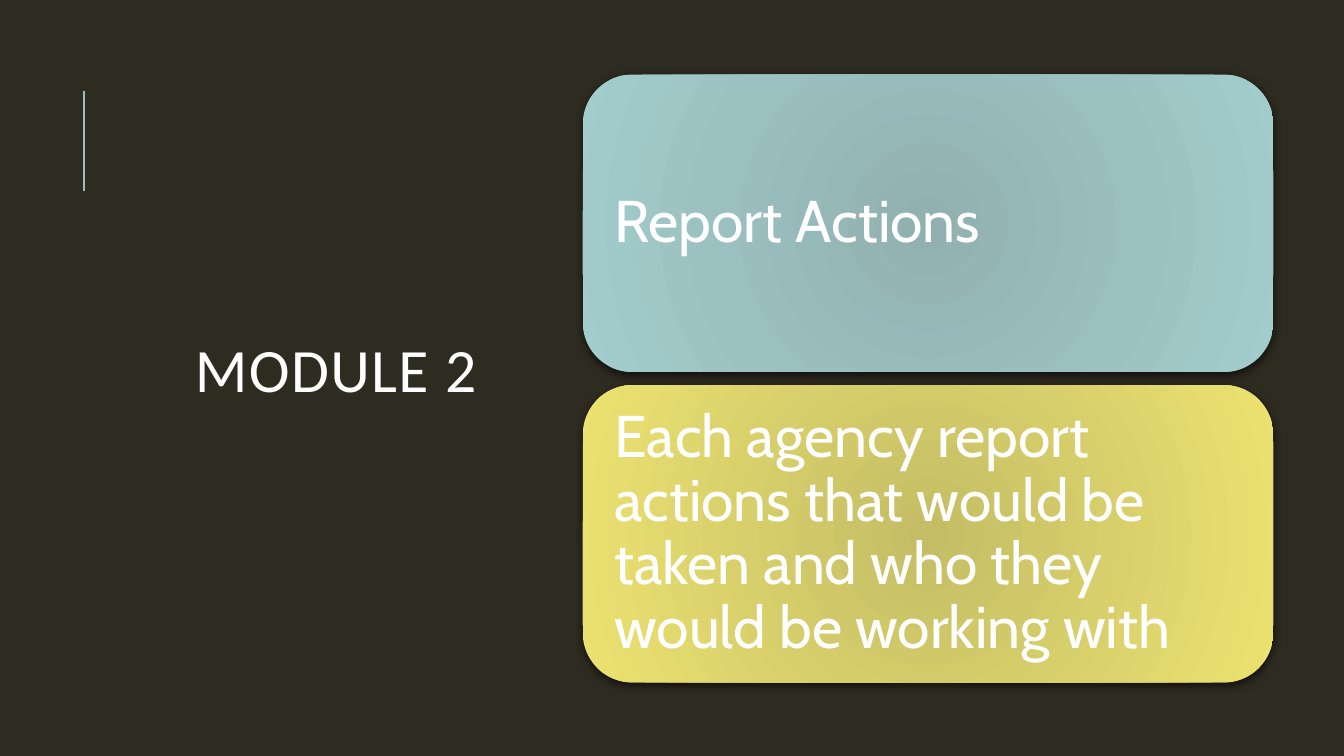
from lxml import etree
from pptx import Presentation
from pptx.dml.color import RGBColor
from pptx.enum.shapes import MSO_CONNECTOR, MSO_SHAPE
from pptx.enum.text import MSO_ANCHOR as ANCHOR, MSO_AUTO_SIZE as AUTO_SIZE, PP_ALIGN as ALIGN
from pptx.oxml import parse_xml
from pptx.oxml.ns import qn
from pptx.util import Inches, Pt

NAMESPACE = 'xmlns:a="http://schemas.openxmlformats.org/drawingml/2006/main"'
WHITE, BACKGROUND, ACCENT = "FFFFFF", "2E2B21", "9CBEBD"
CARDS = [
    ("Report Actions", "91B1B0", "A2CDCC"),
    ("Each agency report actions that would be taken and who they would be working with",
     "C4BD65", "ECE271"),
]


def color(hex_string):
    return RGBColor.from_string(hex_string)


def write_text(shape, text, font, frame_format, paragraph_format):
    frame = shape.text_frame
    frame.text = text
    paragraph = frame.paragraphs[0]
    run = paragraph.runs[0]
    run.font.color.rgb = color(WHITE)
    for target, values in ((frame, frame_format), (paragraph, paragraph_format), (run.font, font)):
        for name, value in values.items():
            setattr(target, name, value)
    return run


def add_title(slide, left, top, width, height):
    """Right-aligned title with the accent rule above it."""
    title = slide.shapes.title
    title.left, title.top, title.width, title.height = map(Inches, (left, top, width, height))
    run = write_text(
        title, "MODULE 2", {"name": "Calibri", "size": Pt(44)},
        {"vertical_anchor": ANCHOR.MIDDLE, "word_wrap": True, "auto_size": AUTO_SIZE.NONE},
        {"alignment": ALIGN.RIGHT, "line_spacing": 0.8})
    run.font._element.set("spc", "100")

    rule_x, rule_top = Inches(left + 0.09), Inches(top - 1.36)
    rule = slide.shapes.add_connector(
        MSO_CONNECTOR.STRAIGHT, rule_x, rule_top + Inches(1), rule_x, rule_top)
    rule.line.color.rgb = color(ACCENT)
    rule.line.width = Pt(1.5)
    etree.SubElement(rule._element.spPr, qn("a:effectLst"))


def fill_radial(shape, center, edge):
    shape.fill.gradient()
    for stop, hex_string in zip(shape.fill.gradient_stops, (center, edge)):
        stop.color.rgb = color(hex_string)
    gradient = shape._element.spPr.find(qn("a:gradFill"))
    gradient.replace(gradient.find(qn("a:lin")), parse_xml(
        f'<a:path {NAMESPACE} path="circle">'
        '<a:fillToRect l="50000" t="50000" r="50000" b="50000"/></a:path>'))


def add_shadow(shape):
    shape._element.spPr.append(parse_xml(
        f'<a:effectLst {NAMESPACE}><a:outerShdw blurRad="{Pt(6)}" dist="{Pt(2)}" dir="5400000" '
        'algn="ctr" rotWithShape="0"><a:srgbClr val="000000"><a:alpha val="60000"/></a:srgbClr>'
        '</a:outerShdw></a:effectLst>'))


def add_cards(slide, left, top, width, height, gap=0.13):
    """Equal rounded cards stacked in the given box."""
    card_height = (height - gap * (len(CARDS) - 1)) / len(CARDS)
    margins = {f"margin_{side}": Inches(0.17) for side in ("left", "top", "right", "bottom")}
    for index, (text, center, edge) in enumerate(CARDS):
        card_top = top + index * (card_height + gap)
        card = slide.shapes.add_shape(
            MSO_SHAPE.ROUNDED_RECTANGLE, *map(Inches, (left, card_top, width, card_height)))
        card.line.fill.background()
        fill_radial(card, center, edge)
        add_shadow(card)
        write_text(
            card, text, {"name": "Cabin", "size": Pt(42)},
            {"vertical_anchor": ANCHOR.MIDDLE, "word_wrap": True, **margins},
            {"alignment": ALIGN.LEFT, "line_spacing": 0.9})


def main():
    presentation = Presentation()
    presentation.slide_width, presentation.slide_height = Inches(13.33), Inches(7.5)
    slide = presentation.slides.add_slide(presentation.slide_layouts[5])
    background = slide.background.fill
    background.solid()
    background.fore_color.rgb = color(BACKGROUND)
    add_title(slide, 0.74, 2.26, 4.09, 2.91)
    add_cards(slide, 5.78, 0.74, 6.85, 6.03)
    presentation.save("out.pptx")


if __name__ == "__main__":
    main()
